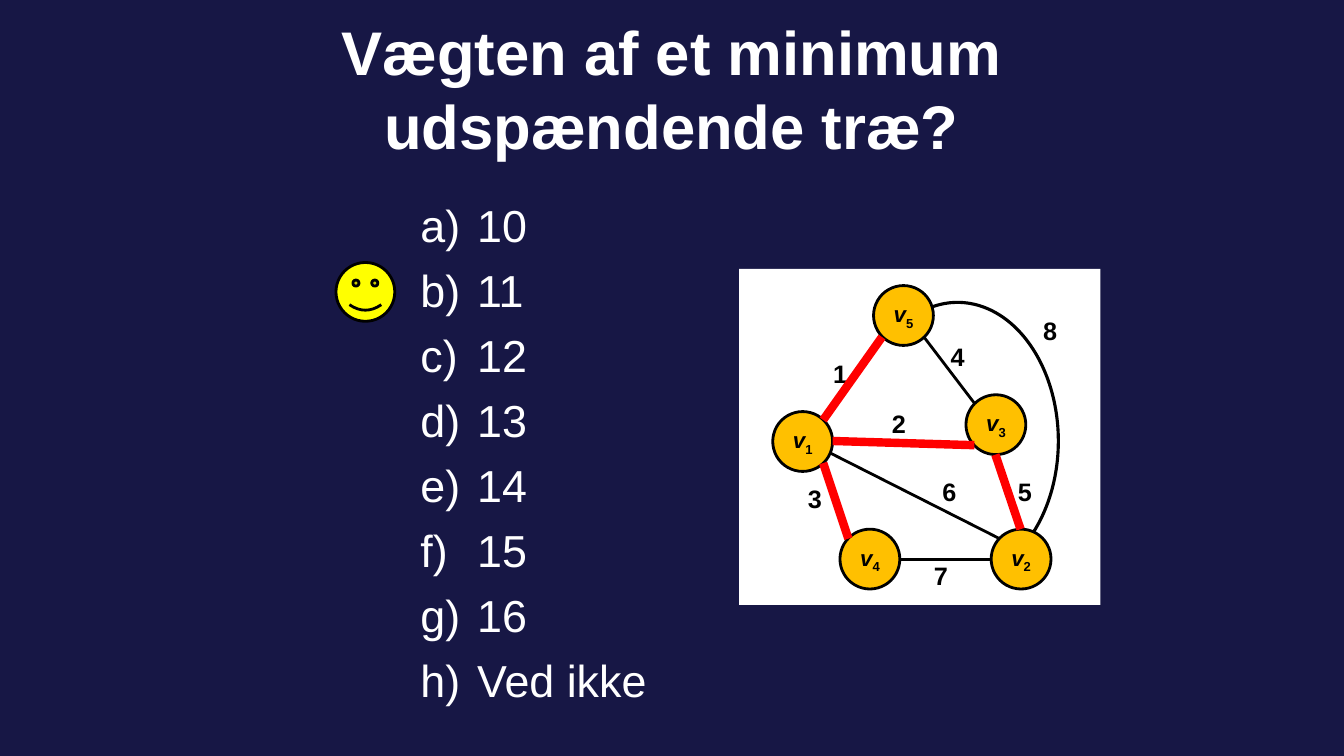
from lxml.etree import SubElement
from pptx import Presentation
from pptx.dml.color import RGBColor
from pptx.enum.shapes import MSO_CONNECTOR as LINE, MSO_SHAPE as SHAPE
from pptx.enum.text import MSO_ANCHOR as ANCHOR, PP_ALIGN as ALIGN
from pptx.oxml.ns import qn
from pptx.util import Emu, Pt

PX = 9525
FONT = "Arial"
NAVY = RGBColor(0x17, 0x17, 0x45)
WHITE = RGBColor(0xFF, 0xFF, 0xFF)
BLACK = RGBColor(0, 0, 0)
YELLOW = RGBColor(0xFF, 0xFF, 0)
AMBER = RGBColor(0xFF, 0xC0, 0)
RED = RGBColor(0xFF, 0, 0)

NODE_SIZE = 57
OPTION_INDENT = 54
OPTIONS = ["10", "11", "12", "13", "14", "15", "16", "Ved ikke"]
NODES = [("5", 832, 272), ("4", 800, 504), ("3", 920, 376), ("2", 944, 504)]
OTHER_EDGES = [
    (928, 384, 880, 321),
    (856, 533, 944, 533),
    (776, 424, 952, 513),
]
TREE_EDGES = [
    (784, 400, 840, 321),
    (784, 441, 808, 513),
    (793, 420, 928, 424),
    (972, 504, 948, 433),
]
WEIGHTS = [
    ("1", 784, 337),
    ("2", 840, 384),
    ("3", 760, 456),
    ("4", 896, 320),
    ("5", 960, 449),
    ("6", 888, 449),
    ("7", 880, 529),
    ("8", 984, 296),
]


def px(*lengths):
    return [Emu(length * PX) for length in lengths]


def style_run(run, size, color, bold=False, italic=False):
    run.font.name = FONT
    run.font.size = Pt(size)
    run.font.color.rgb = color
    run.font.bold = bold
    run.font.italic = italic


def add_text(slide, box, lines, size, color, bold=False, align=ALIGN.LEFT, anchor=ANCHOR.TOP):
    frame = slide.shapes.add_textbox(*px(*box)).text_frame
    frame.word_wrap = True
    frame.vertical_anchor = anchor
    frame.text = "\n".join(lines)
    for paragraph in frame.paragraphs:
        paragraph.alignment = align
        style_run(paragraph.runs[0], size, color, bold)
    return frame


def add_options(slide):
    options = add_text(slide, (391, 184, 262, 392), OPTIONS, 32, WHITE)
    for option in options.paragraphs:
        option.space_before = Pt(8)
        properties = option._p.get_or_add_pPr()
        properties.set("marL", str(OPTION_INDENT * PX))
        properties.set("indent", str(-OPTION_INDENT * PX))
        SubElement(properties, qn("a:buFont"), typeface=FONT)
        SubElement(properties, qn("a:buAutoNum"), type="alphaLcParenR")


def add_figure(slide, kind, box, fill=None, line_width=None):
    figure = slide.shapes.add_shape(kind, *px(*box))
    figure.shadow.inherit = False
    if fill is None:
        figure.fill.background()
    else:
        figure.fill.solid()
        figure.fill.fore_color.rgb = fill
    if line_width is None:
        figure.line.fill.background()
    else:
        figure.line.color.rgb = BLACK
        figure.line.width = Pt(line_width)
    return figure


def add_node(slide, index, left, top):
    node = add_figure(slide, SHAPE.OVAL, (left, top, NODE_SIZE, NODE_SIZE), AMBER, 2)
    frame = node.text_frame
    frame.word_wrap = False
    frame.vertical_anchor = ANCHOR.MIDDLE
    label = frame.paragraphs[0]
    label.alignment = ALIGN.CENTER
    for text in ("v", index):
        label.add_run().text = text
    letter, subscript = label.runs
    style_run(letter, 16, BLACK, bold=True, italic=True)
    style_run(subscript, 16, BLACK, bold=True)
    subscript.font._element.set("baseline", "-25000")


def add_edge(slide, ends, color, width):
    edge = slide.shapes.add_connector(LINE.STRAIGHT, *px(*ends))
    edge.line.color.rgb = color
    edge.line.width = Pt(width)
    SubElement(edge._element.spPr, qn("a:effectLst"))


def add_graph(slide):
    add_figure(slide, SHAPE.RECTANGLE, (704, 256, 344, 320), WHITE)
    outer_edge = add_figure(slide, SHAPE.ARC, (816, 288, 192, 264), line_width=2.25)
    outer_edge.adjustments[0] = 155.17
    outer_edge.adjustments[1] = 40.17
    for node in NODES:
        add_node(slide, *node)
    for ends in OTHER_EDGES + TREE_EDGES:
        add_edge(slide, ends, BLACK, 2)
    add_node(slide, "1", 736, 392)
    for weight, left, top in WEIGHTS:
        add_text(slide, (left, top, 32, 38), [weight], 18, BLACK, bold=True)
    for ends in TREE_EDGES:
        add_edge(slide, ends, RED, 6)


def main():
    deck = Presentation()
    deck.slide_width, deck.slide_height = px(1280, 720)
    slide = deck.slides.add_slide(deck.slide_layouts[6])
    slide.background.fill.solid()
    slide.background.fill.fore_color.rgb = NAVY
    add_options(slide)
    add_text(
        slide, (160, 16, 960, 136), ["Vægten af et minimum udspændende træ?"],
        44, WHITE, bold=True, align=ALIGN.CENTER, anchor=ANCHOR.MIDDLE,
    )
    add_figure(slide, SHAPE.SMILEY_FACE, (320, 250, 56, 56), YELLOW, 2)
    add_graph(slide)
    deck.save("out.pptx")


if __name__ == "__main__":
    main()
